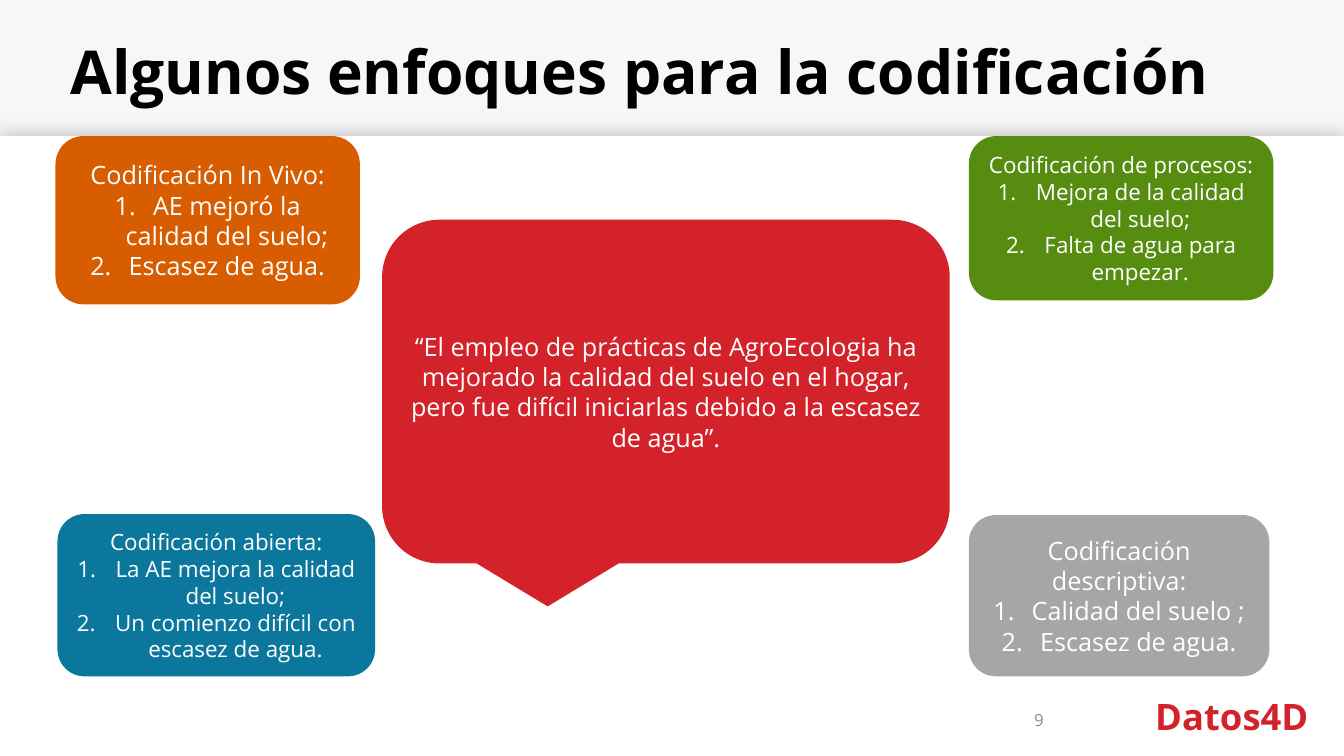
from dataclasses import dataclass

from lxml.etree import SubElement
from pptx import Presentation
from pptx.dml.color import RGBColor
from pptx.enum.shapes import MSO_SHAPE as Preset
from pptx.enum.text import MSO_ANCHOR as Anchor, PP_ALIGN as Align
from pptx.oxml.ns import qn
from pptx.shapes.autoshape import Shape
from pptx.slide import Slide
from pptx.util import Emu, Pt

PX = 9144
FONT = "Open Sans"
WHITE = "FFFFFF"
RED = "D32229"
LIST_INDENT = 38


@dataclass(frozen=True)
class Box:
    left: int
    top: int
    width: int
    height: int


@dataclass(frozen=True)
class Approach:
    box: Box
    color: str
    size: int
    heading: str
    codes: tuple[str, ...]


APPROACHES = (
    Approach(Box(55, 135, 302, 167), "D85C00", 18, "Codificación In Vivo:",
             ("AE mejoró la calidad del suelo;", "Escasez de agua.")),
    Approach(Box(961, 135, 302, 163), "568D11", 16, "Codificación de procesos:",
             ("Mejora de la calidad del suelo;", "Falta de agua para empezar.")),
    Approach(Box(57, 510, 315, 161), "0C779D", 16, "Codificación abierta:",
             ("La AE mejora la calidad del suelo;",
              "Un comienzo difícil con escasez de agua.")),
    Approach(Box(961, 511, 298, 160), "A6A6A6", 18, "Codificación descriptiva:",
             ("Calidad del suelo ;", "Escasez de agua.")),
)
QUOTE = ("“El empleo de prácticas de AgroEcologia ha mejorado la calidad del suelo "
         "en el hogar, pero fue difícil iniciarlas debido a la escasez de agua”.")


def px(length: int) -> Emu:
    """Turn px into EMU."""
    return Emu(length * PX)


def rgb(color: str) -> RGBColor:
    """Turn a hex string into a colour."""
    return RGBColor.from_string(color)


def place(box: Box) -> tuple[Emu, Emu, Emu, Emu]:
    """Give the position and size of a box in EMU."""
    return px(box.left), px(box.top), px(box.width), px(box.height)


def add_block(slide: Slide, preset: Preset, box: Box, color: str) -> Shape:
    """Draw a filled shape without outline or shadow."""
    block = slide.shapes.add_shape(preset, *place(box))
    block.shadow.inherit = False
    block.fill.solid()
    block.fill.fore_color.rgb = rgb(color)
    block.line.fill.background()
    return block


def write(holder: Shape, *lines: str, size: float, color: str = WHITE,
          bold: bool = False, align: Align = Align.CENTER,
          anchor: Anchor = Anchor.MIDDLE, spacing: float = 1.0,
          numbered: bool = False) -> None:
    """Write one paragraph per line, numbering those after the first if asked."""
    frame = holder.text_frame
    frame.word_wrap = True
    frame.vertical_anchor = anchor
    for index, line in enumerate(lines):
        paragraph = frame.paragraphs[0] if index == 0 else frame.add_paragraph()
        paragraph.alignment = align
        paragraph.line_spacing = spacing
        run = paragraph.add_run()
        run.text = line
        run.font.name = FONT
        run.font.size = Pt(size)
        run.font.bold = bold
        run.font.color.rgb = rgb(color)
        if numbered and index:
            number(paragraph._p.get_or_add_pPr())


def number(properties) -> None:
    """Give a paragraph a hanging arabic number."""
    properties.set("marL", str(px(LIST_INDENT)))
    properties.set("indent", str(-px(LIST_INDENT)))
    SubElement(properties, qn("a:buFont"), typeface="+mj-lt")
    SubElement(properties, qn("a:buAutoNum"), type="arabicPeriod")


def cast_shadow(block: Shape) -> None:
    """Add a soft shadow that falls upwards."""
    effects = block._element.spPr.find(qn("a:effectLst"))
    shadow = SubElement(effects, qn("a:outerShdw"), blurRad=str(Pt(12)),
                        dist=str(Pt(3)), dir=str(279 * 60000), rotWithShape="0")
    tint = SubElement(shadow, qn("a:srgbClr"), val="000000")
    SubElement(tint, qn("a:alpha"), val="16000")


def add_label(slide: Slide, box: Box, text: str, **style) -> None:
    """Add a text box."""
    write(slide.shapes.add_textbox(*place(box)), text, **style)


def add_approach(slide: Slide, approach: Approach) -> None:
    """Draw one coding approach with its numbered codes."""
    card = add_block(slide, Preset.ROUNDED_RECTANGLE, approach.box, approach.color)
    write(card, approach.heading, *approach.codes, size=approach.size, numbered=True)


def main() -> None:
    """Build and save the slide."""
    deck = Presentation()
    deck.slide_width, deck.slide_height = px(1333), px(750)
    slide = deck.slides.add_slide(deck.slide_layouts[6])

    add_block(slide, Preset.RECTANGLE, Box(-1, -1, 1334, 579), "F7F7F7")
    content = add_block(slide, Preset.RECTANGLE, Box(-1, 135, 1334, 615), WHITE)
    cast_shadow(content)
    add_label(slide, Box(1136, 684, 190, 54), "Datos4D", size=26, color="D2222A",
              bold=True, align=Align.LEFT, anchor=Anchor.TOP)
    add_label(slide, Box(791, 689, 254, 40), "9", size=12, color="8C8C8C",
              align=Align.RIGHT, anchor=Anchor.BOTTOM)
    add_label(slide, Box(60, 14, 1260, 121), "Algunos enfoques para la codificación",
              size=43.2, color="000000", bold=True, align=Align.LEFT, spacing=0.9)

    quote = add_block(slide, Preset.ROUNDED_RECTANGULAR_CALLOUT,
                      Box(379, 218, 563, 341), RED)
    write(quote, QUOTE, size=18)
    for approach in APPROACHES:
        add_approach(slide, approach)
    deck.save("out.pptx")


if __name__ == "__main__":
    main()
